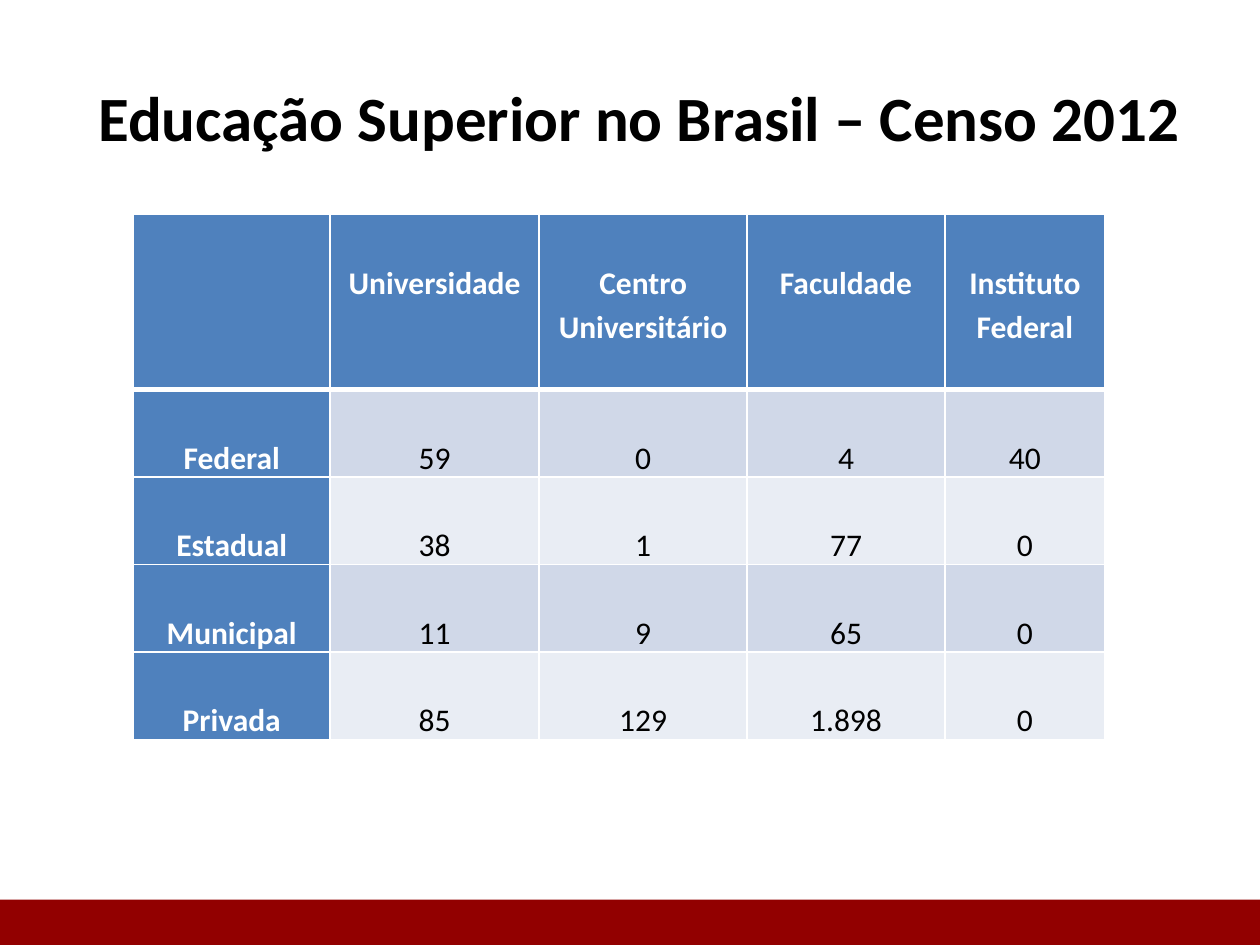
from lxml import etree
from pptx import Presentation
from pptx import util as u
from pptx.dml.color import RGBColor
from pptx.enum import shapes, text
from pptx.oxml.ns import qn

WIDTH, HEIGHT = u.Inches(10), u.Inches(7.5)
FONT = "Calibri"
COLORS = {
    "ink": "000000",
    "white": "FFFFFF",
    "footer": "920000",
    "header": "4F81BD",
    "band_dark": "D0D8E8",
    "band_light": "E9EDF4",
}
COLUMN_WIDTHS = [1.56, 1.66, 1.65, 1.57, 1.27]
ROW_HEIGHTS = [1.39] + [0.68] * 4
ROWS = [
    ["", "Universidade", "Centro Universitário", "Faculdade", "Instituto Federal"],
    ["Federal", "59", "0", "4", "40"],
    ["Estadual", "38", "1", "77", "0"],
    ["Municipal", "11", "9", "65", "0"],
    ["Privada", "85", "129", "1.898", "0"],
]


def color(name):
    return RGBColor.from_string(COLORS[name])


def add_span(para, words, size, ink, bold):
    span = para.add_run()
    span.text = words
    span.font.name = FONT
    span.font.size = u.Pt(size)
    span.font.bold = bold
    span.font.color.rgb = color(ink)


def add_title(page, words):
    box = page.shapes.add_textbox(
        u.Inches(0.5), u.Inches(0.3), u.Inches(9.15), u.Inches(1.25))
    frame = box.text_frame
    frame.word_wrap = True
    frame.vertical_anchor = text.MSO_ANCHOR.MIDDLE
    para = frame.paragraphs[0]
    para.alignment = text.PP_ALIGN.CENTER
    add_span(para, words, 36, "ink", True)


def add_footer_bar(page):
    height = u.Inches(0.36)
    bar = page.shapes.add_shape(
        shapes.MSO_SHAPE.RECTANGLE, 0, HEIGHT - height, WIDTH, height)
    bar.shadow.inherit = False
    bar.fill.solid()
    bar.fill.fore_color.rgb = color("footer")
    bar.line.fill.background()


def set_borders(cell, widths):
    """Draw white cell edges; widths maps an edge tag to points."""
    properties = cell._tc.get_or_add_tcPr()
    for position, (edge, width) in enumerate(widths.items()):
        line = etree.Element(qn(f"a:{edge}"), w=str(u.Pt(width)))
        fill = etree.SubElement(line, qn("a:solidFill"))
        etree.SubElement(fill, qn("a:srgbClr"), val=COLORS["white"])
        properties.insert(position, line)


def fill_cell(cell, words, row, column):
    heading = row == 0 or column == 0
    band = "band_dark" if row % 2 else "band_light"
    cell.fill.solid()
    cell.fill.fore_color.rgb = color("header" if heading else band)
    set_borders(cell, {"lnL": 1, "lnR": 1,
                       "lnT": 3 if row == 1 else 1,
                       "lnB": 3 if row == 0 else 1})
    cell.margin_left = cell.margin_right = u.Inches(0.07)
    cell.margin_top, cell.margin_bottom = u.Inches(0.35), 0
    if words:
        para = cell.text_frame.paragraphs[0]
        para.alignment = text.PP_ALIGN.CENTER
        para.line_spacing = 1.15
        add_span(para, words, 18, "white" if heading else "ink", heading)


def add_census_table(page):
    table = page.shapes.add_table(
        len(ROWS), len(COLUMN_WIDTHS), u.Inches(1.06), u.Inches(1.7),
        u.Inches(sum(COLUMN_WIDTHS)), u.Inches(sum(ROW_HEIGHTS))).table
    for column, width in zip(table.columns, COLUMN_WIDTHS):
        column.width = u.Inches(width)
    for row, height in zip(table.rows, ROW_HEIGHTS):
        row.height = u.Inches(height)
    for r, values in enumerate(ROWS):
        for c, words in enumerate(values):
            fill_cell(table.cell(r, c), words, r, c)


def main():
    deck = Presentation()
    deck.slide_width, deck.slide_height = WIDTH, HEIGHT
    page = deck.slides.add_slide(deck.slide_layouts[6])
    add_title(page, "Educação Superior no Brasil – Censo 2012")
    add_footer_bar(page)
    add_census_table(page)
    deck.save("out.pptx")


if __name__ == "__main__":
    main()
